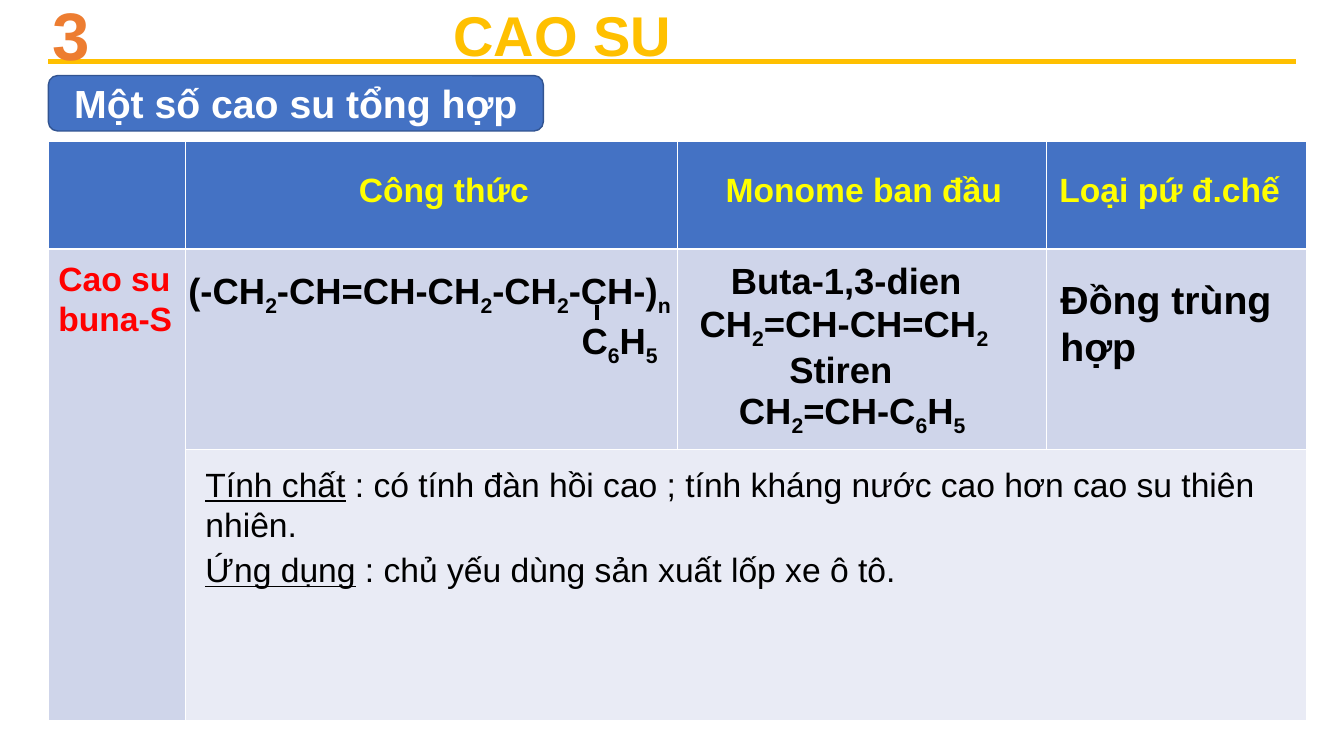
from dataclasses import dataclass

from lxml import etree
from pptx import Presentation
from pptx.dml.color import RGBColor
from pptx.enum.shapes import MSO_CONNECTOR, MSO_SHAPE
from pptx.enum.text import MSO_ANCHOR, MSO_AUTO_SIZE, PP_ALIGN
from pptx.oxml.ns import qn
from pptx.util import Emu, Inches, Pt

STRAIGHT = MSO_CONNECTOR.STRAIGHT
ROUNDED = MSO_SHAPE.ROUNDED_RECTANGLE
MIDDLE = MSO_ANCHOR.MIDDLE
GROW = MSO_AUTO_SIZE.SHAPE_TO_FIT_TEXT
CENTER = PP_ALIGN.CENTER

WIDTH, HEIGHT = Inches(13.33), Inches(7.5)
FONT = "Arial"
BLUE, GOLD, ORANGE, YELLOW = "4472C4", "FFC000", "ED7D31", "FFFF00"
RED, BLACK, WHITE = "FF0000", "000000", "FFFFFF"
BAND_DARK, BAND_LIGHT, NAVY = "CFD5EA", "E9EBF5", "325491"

LEFT = 3.6
TABLE_TOP = 18.67
COLUMNS = (10.2, 36.61, 27.46, 19.35)
ROWS = (14.27, 26.53, 35.87)
ROW_FILLS = (BLUE, BAND_DARK, BAND_LIGHT)
HEADER_TOP = 21.73


@dataclass(frozen=True)
class Label:
    """Text in a box; left, top, width and height are percent of the slide."""
    words: str
    left: float
    top: float
    width: float
    height: float
    size: float = 26
    color: str = BLACK
    bold: bool = True
    underline: bool = False
    second_line_indent: float = 0


# Every second piece between bars is a subscript, or underlined if so flagged.
LABELS = (
    Label("3", 3.15, -1.6, 5.25, 12.13, 48, ORANGE),
    Label("CAO SU", 33, -0.53, 26.4, 10.27, 40, GOLD),
    Label("Công thức", 25.96, HEADER_TOP, 17.4, 6.67, 24, YELLOW),
    Label("Monome ban đầu", 53.26, HEADER_TOP, 22.43, 6.67, 24, YELLOW),
    Label("Loại pứ đ.chế", 78.09, HEADER_TOP, 18.38, 6.67, 24, YELLOW),
    Label("Cao su buna-S", LEFT, 33.47, 10.95, 12.13, 24, RED),
    Label("(-CH|2|-CH=CH-CH|2|-CH|2|-CH-)|n\nC|6|H|5", 13.28, 34.8, 38.26, 13.07,
          second_line_indent=29.26),
    Label("Buta-1,3-dien", 53.64, 33.47, 21.31, 7.2),
    Label("CH|2|=CH-CH=CH|2", 51.31, 39.2, 26.03, 7.2),
    Label("Stiren", 57.99, 45.2, 12.98, 7.2),
    Label("CH|2|=CH-C|6|H|5", 54.24, 50.67, 18.9, 7.2),
    Label("Đồng trùng hợp", 78.17, 35.73, 17.48, 13.87, 28),
    Label("|Tính chất| : có tính đàn hồi cao ; tính kháng nước cao hơn cao su thiên nhiên.",
          14.55, 60.67, 79.89, 12.13, 24, bold=False, underline=True),
    Label("|Ứng dụng| : chủ yếu dùng sản xuất lốp xe ô tô.",
          14.55, 72, 81.85, 6.67, 24, bold=False, underline=True),
)


def across(percent: float) -> Emu:
    return Emu(round(WIDTH * percent / 100))


def down(percent: float) -> Emu:
    return Emu(round(HEIGHT * percent / 100))


def rgb(color: str) -> RGBColor:
    return RGBColor.from_string(color)


def write(paragraph, words: str, *, size: float, color: str,
          bold: bool = True, underline: bool = False) -> None:
    for index, piece in enumerate(words.split("|")):
        if not piece:
            continue
        run = paragraph.add_run()
        run.text = piece
        font = run.font
        font.name, font.size, font.bold = FONT, Pt(size), bold
        font.color.rgb = rgb(color)
        if index % 2 and underline:
            font.underline = True
        elif index % 2:
            run._r.get_or_add_rPr().set("baseline", "-25000")


def add_label(slide, label: Label) -> None:
    box = slide.shapes.add_textbox(across(label.left), down(label.top),
                                   across(label.width), down(label.height))
    frame = box.text_frame
    frame.word_wrap = True
    frame.auto_size = GROW
    for number, line in enumerate(label.words.split("\n")):
        paragraph = frame.add_paragraph() if number else frame.paragraphs[0]
        if number:
            indent = across(label.second_line_indent)
            paragraph._p.get_or_add_pPr().set("marL", str(indent))
        write(paragraph, line, size=label.size, color=label.color,
              bold=label.bold, underline=label.underline)


def add_line(slide, x1: float, y1: float, x2: float, y2: float, color: str) -> None:
    line = slide.shapes.add_connector(STRAIGHT, across(x1), down(y1), across(x2), down(y2))
    line.line.color.rgb = rgb(color)
    line.line.width = Pt(3)
    etree.SubElement(line._element.spPr, qn("a:effectLst"))


def add_subtitle(slide) -> None:
    banner = slide.shapes.add_shape(ROUNDED, across(LEFT), down(10), across(36.83), down(7.33))
    banner.shadow.inherit = False
    banner.fill.solid()
    banner.fill.fore_color.rgb = rgb(BLUE)
    banner.line.color.rgb = rgb(NAVY)
    banner.line.width = Pt(1)
    banner.text_frame.word_wrap = True
    banner.text_frame.vertical_anchor = MIDDLE
    heading = banner.text_frame.paragraphs[0]
    heading.alignment = CENTER
    write(heading, "Một số cao su tổng hợp", size=28, color=WHITE)


def add_rubber_table(slide) -> None:
    table = slide.shapes.add_table(len(ROWS), len(COLUMNS), across(LEFT), down(TABLE_TOP),
                                   across(sum(COLUMNS)), down(sum(ROWS))).table
    for column, width in zip(table.columns, COLUMNS):
        column.width = across(width)
    for row, height, color in zip(table.rows, ROWS, ROW_FILLS):
        row.height = down(height)
        for cell in row.cells:
            cell.fill.solid()
            cell.fill.fore_color.rgb = rgb(color)
    table.cell(1, 0).merge(table.cell(2, 0))
    table.cell(2, 1).merge(table.cell(2, 3))


def main() -> None:
    deck = Presentation()
    deck.slide_width, deck.slide_height = WIDTH, HEIGHT
    slide = deck.slides.add_slide(deck.slide_layouts[6])
    add_line(slide, LEFT, 8.13, 96.4, 8.13, GOLD)
    add_subtitle(slide)
    add_rubber_table(slide)
    for label in LABELS:
        add_label(slide, label)
    add_line(slide, 44.41, 40.4, 44.41, 42.27, BLACK)
    deck.save("out.pptx")


if __name__ == "__main__":
    main()
